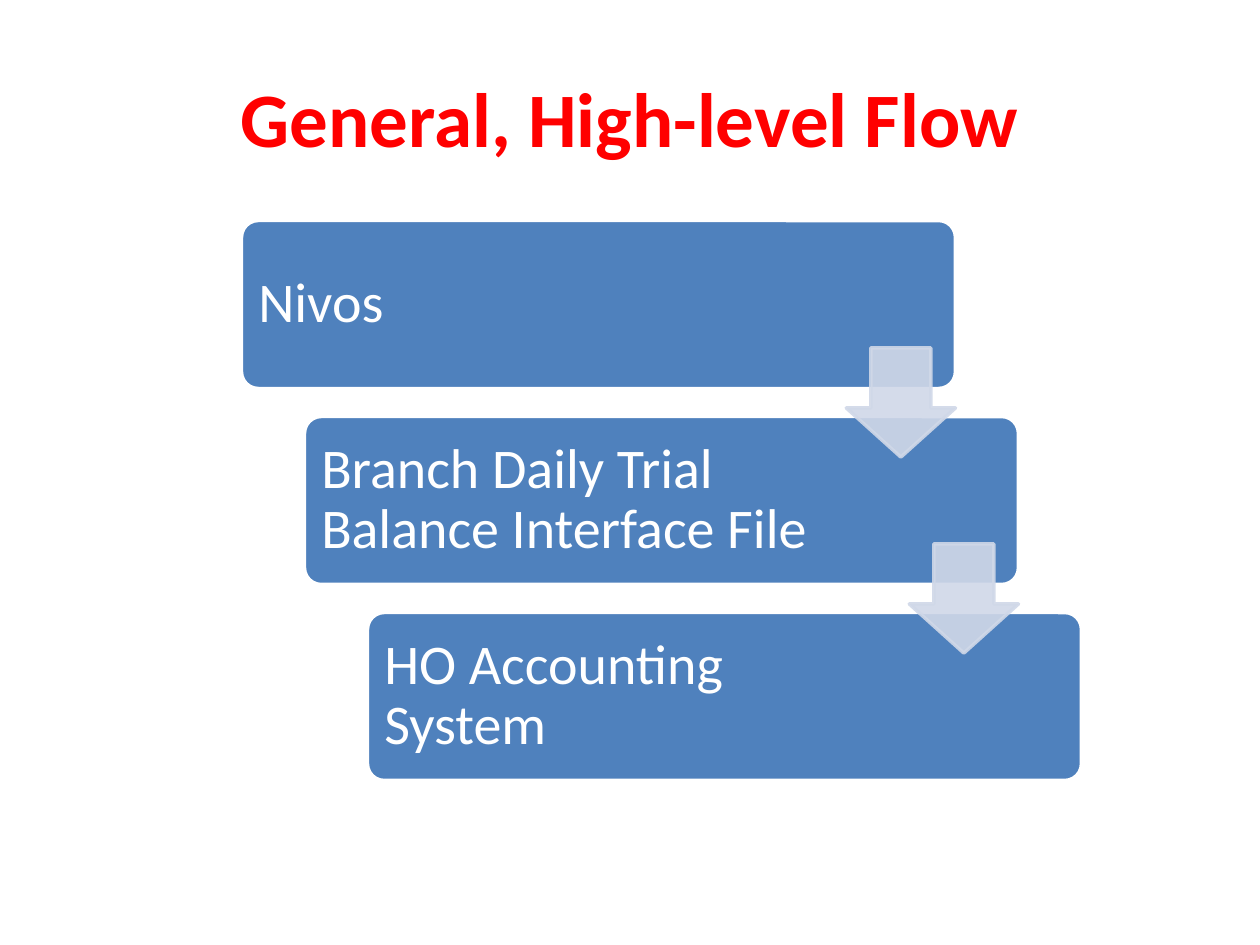
"""Build a slide with a stepped flow of three boxes."""
from lxml import etree
from pptx import Presentation
from pptx.dml.color import RGBColor
from pptx.enum.shapes import MSO_SHAPE
from pptx.enum.text import MSO_ANCHOR, PP_ALIGN
from pptx.oxml.ns import qn
from pptx.util import Pt

ROUND = MSO_SHAPE.ROUNDED_RECTANGLE
DOWN = MSO_SHAPE.DOWN_ARROW
MIDDLE = MSO_ANCHOR.MIDDLE
LEFT, CENTER = PP_ALIGN.LEFT, PP_ALIGN.CENTER
COLORS = {"title": "FF0000", "box": "4F81BD", "white": "FFFFFF", "arrow": "D0D8E8"}
STEPS = ["Nivos", "Branch Daily Trial Balance Interface File", "HO Accounting System"]
STEP_X, STEP_Y = 36, 112


def write(frame, text, size=32, color="white", bold=False, align=LEFT, space=1.0, inset=None):
    frame.word_wrap = True
    frame.vertical_anchor = MIDDLE
    if inset is not None:
        frame.margin_left = frame.margin_right = Pt(inset)
        frame.margin_top = frame.margin_bottom = Pt(inset)
    para = frame.paragraphs[0]
    para.alignment = align
    para.line_spacing = space
    run = para.add_run()
    run.text = text
    font = run.font
    font.name, font.size, font.bold = "Calibri", Pt(size), bold
    font.color.rgb = RGBColor.from_string(COLORS[color])


class Deck:
    def __init__(self):
        self.file = Presentation()
        self.file.slide_width, self.file.slide_height = Pt(720), Pt(540)
        self.slide = self.file.slides.add_slide(self.file.slide_layouts[5])

    def title(self, text, *area):
        head = self.slide.shapes.title
        head.left, head.top, head.width, head.height = map(Pt, area)
        write(head.text_frame, text, size=44, color="title", bold=True, align=CENTER)

    def shape(self, kind, area, fill, line, adjust, alpha=None):
        item = self.slide.shapes.add_shape(kind, *map(Pt, area))
        item.shadow.inherit = False
        item.fill.solid()
        item.fill.fore_color.rgb = RGBColor.from_string(COLORS[fill])
        item.line.color.rgb = RGBColor.from_string(COLORS[line])
        item.line.width = Pt(2)
        for index, value in enumerate(adjust):
            item.adjustments[index] = value
        if alpha is not None:
            for color in item.element.spPr.iter(qn("a:srgbClr")):
                etree.SubElement(color, qn("a:alpha")).set("val", str(alpha * 1000))

    def box(self, left, top):
        self.shape(ROUND, (left, top, 408, 96), "box", "white", [0.1])

    def label(self, text, left, top):
        item = self.slide.shapes.add_textbox(*map(Pt, (left, top, 310, 96)))
        write(item.text_frame, text, space=0.9, inset=9.6)

    def arrow(self, left, top):
        self.shape(DOWN, (left, top, 62.4, 62.4), "arrow", "arrow", [0.55, 0.45], alpha=90)


def main():
    deck = Deck()
    deck.title("General, High-level Flow", 36, 21.6, 648, 90)
    for index, text in enumerate(STEPS):
        left, top = 138 + index * STEP_X, 126 + index * STEP_Y
        deck.box(left, top)
        deck.label(text, left, top)
    for index in range(len(STEPS) - 1):
        deck.arrow(483.6 + index * STEP_X, 198.8 + index * STEP_Y)
    deck.file.save("out.pptx")


if __name__ == "__main__":
    main()
